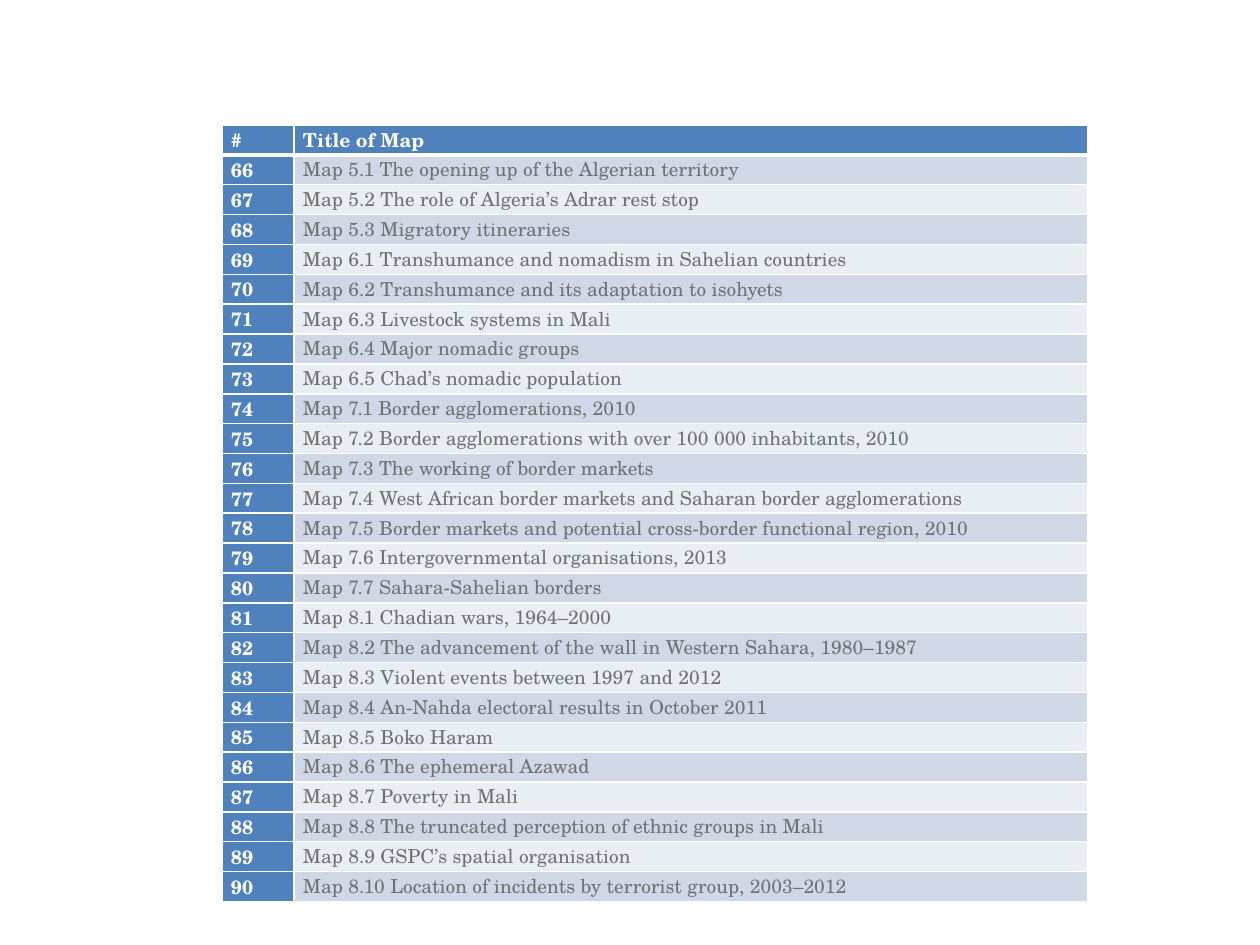
from typing import NamedTuple

from lxml.etree import SubElement
from pptx import Presentation
from pptx.dml.color import RGBColor
from pptx.enum.text import PP_ALIGN
from pptx.oxml.ns import qn
from pptx.table import Table, _Cell
from pptx.util import Emu, Pt

PX_PER_INCH = 126
SLIDE_WIDTH, SLIDE_HEIGHT = 1260, 945
TABLE_LEFT, TABLE_TOP = 222, 125
NUMBER_WIDTH, TITLE_WIDTH = 72, 794
ROW_HEIGHT = 29
SIDE_MARGIN = 9
FONT = "TeX Gyre Schola"
FONT_SIZE = 11
WHITE, GRAY, BLUE = "FFFFFF", "727272", "4F81BD"
BANDS = ("D0D8E8", "E9EDF4")
THIN, THICK = 1, 3
FIRST_NUMBER = 66
MAP_TITLES = (
    "Map 5.1 The opening up of the Algerian territory",
    "Map 5.2 The role of Algeria’s Adrar rest stop",
    "Map 5.3 Migratory itineraries",
    "Map 6.1 Transhumance and nomadism in Sahelian countries",
    "Map 6.2 Transhumance and its adaptation to isohyets",
    "Map 6.3 Livestock systems in Mali",
    "Map 6.4 Major nomadic groups",
    "Map 6.5 Chad’s nomadic population",
    "Map 7.1 Border agglomerations, 2010",
    "Map 7.2 Border agglomerations with over 100 000 inhabitants, 2010",
    "Map 7.3 The working of border markets",
    "Map 7.4 West African border markets and Saharan border agglomerations",
    "Map 7.5 Border markets and potential cross-border functional region, 2010",
    "Map 7.6 Intergovernmental organisations, 2013",
    "Map 7.7 Sahara-Sahelian borders",
    "Map 8.1 Chadian wars, 1964–2000",
    "Map 8.2 The advancement of the wall in Western Sahara, 1980–1987",
    "Map 8.3 Violent events between 1997 and 2012",
    "Map 8.4 An-Nahda electoral results in October 2011",
    "Map 8.5 Boko Haram",
    "Map 8.6 The ephemeral Azawad",
    "Map 8.7 Poverty in Mali",
    "Map 8.8 The truncated perception of ethnic groups in Mali",
    "Map 8.9 GSPC’s spatial organisation",
    "Map 8.10 Location of incidents by terrorist group, 2003–2012",
)


class CellStyle(NamedTuple):
    fill: str
    color: str
    bold: bool
    top: int = THIN
    bottom: int = THIN


def px(length: int) -> Emu:
    return Emu(round(length * 914400 / PX_PER_INCH))


def rgb(color: str) -> RGBColor:
    return RGBColor.from_string(color)


def add_borders(cell: _Cell, top: int, bottom: int) -> None:
    """Put white borders ahead of the cell's fill, as the schema requires."""
    properties = cell._tc.get_or_add_tcPr()
    widths = {"a:lnL": THIN, "a:lnR": THIN, "a:lnT": top, "a:lnB": bottom}
    for position, (tag, width) in enumerate(widths.items()):
        line = SubElement(properties, qn(tag), w=str(Pt(width)))
        fill = SubElement(line, qn("a:solidFill"))
        SubElement(fill, qn("a:srgbClr"), val=WHITE)
        properties.insert(position, line)


def write_cell(cell: _Cell, text: str, style: CellStyle) -> None:
    cell.margin_left = cell.margin_right = px(SIDE_MARGIN)
    cell.margin_top = cell.margin_bottom = 0
    cell.fill.solid()
    cell.fill.fore_color.rgb = rgb(style.fill)
    add_borders(cell, style.top, style.bottom)
    para = cell.text_frame.paragraphs[0]
    para.text = text
    para.alignment = PP_ALIGN.JUSTIFY
    font = para.runs[0].font
    font.name = FONT
    font.size = Pt(FONT_SIZE)
    font.bold = style.bold
    font.color.rgb = rgb(style.color)


def fill_table(table: Table) -> None:
    header = CellStyle(BLUE, WHITE, True, bottom=THICK)
    for column, text in enumerate(("#", "Title of Map")):
        write_cell(table.cell(0, column), text, header)
    for index, title in enumerate(MAP_TITLES):
        top = THIN if index else THICK
        number_style = CellStyle(BLUE, WHITE, True, top)
        title_style = CellStyle(BANDS[index % 2], GRAY, False, top)
        write_cell(table.cell(index + 1, 0), str(FIRST_NUMBER + index), number_style)
        write_cell(table.cell(index + 1, 1), title, title_style)


def main() -> None:
    deck = Presentation()
    deck.slide_width, deck.slide_height = px(SLIDE_WIDTH), px(SLIDE_HEIGHT)
    page = deck.slides.add_slide(deck.slide_layouts[6])
    row_count = len(MAP_TITLES) + 1
    table = page.shapes.add_table(
        row_count, 2, px(TABLE_LEFT), px(TABLE_TOP),
        px(NUMBER_WIDTH + TITLE_WIDTH), px(ROW_HEIGHT * row_count),
    ).table
    for column, width in zip(table.columns, (NUMBER_WIDTH, TITLE_WIDTH)):
        column.width = px(width)
    for row in table.rows:
        row.height = px(ROW_HEIGHT)
    fill_table(table)
    deck.save("out.pptx")


if __name__ == "__main__":
    main()
